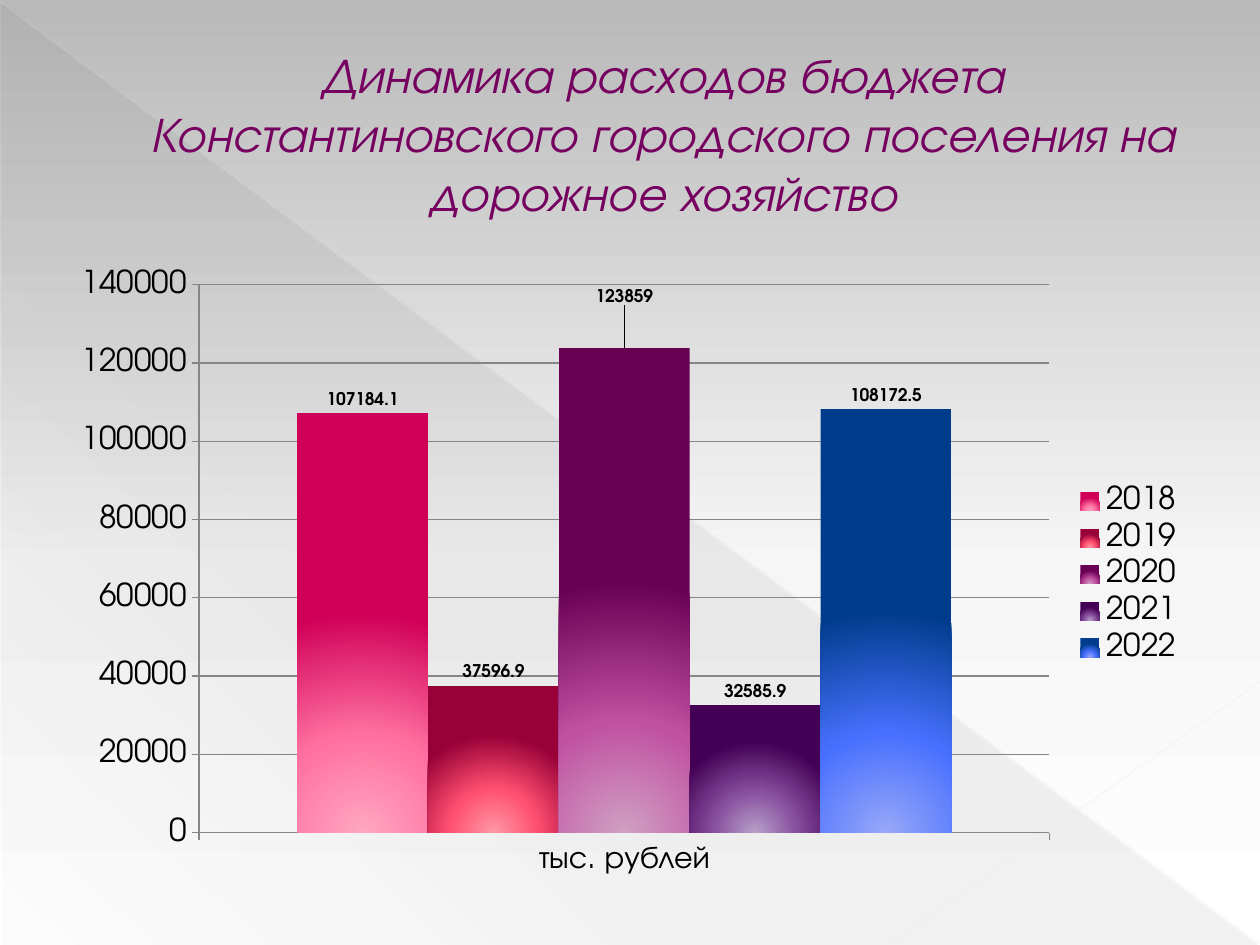
from pptx import Presentation
from pptx.chart.data import CategoryChartData
from pptx.dml.color import RGBColor
from pptx.enum.chart import XL_CHART_TYPE as ChartType, XL_LABEL_POSITION as LabelPos
from pptx.enum.chart import XL_LEGEND_POSITION as LegendPos, XL_TICK_MARK as Tick
from pptx.enum.shapes import MSO_CONNECTOR as Connector, MSO_SHAPE as Shape
from pptx.enum.text import MSO_ANCHOR as Anchor, PP_ALIGN as Align
from pptx.oxml import parse_xml
from pptx.oxml.ns import nsdecls, qn
from pptx.util import Inches, Pt

FONT = "TeX Gyre Adventor"
UNIT = "тыс. рублей"
# year, spending, gradient from the foot of the bar outwards
SPENDING = [
    ("2018", 107184.1, ("FFA6C2", "FF70A0", "D00058")),
    ("2019", 37596.9, ("FF98A4", "FF5070", "980038")),
    ("2020", 123859, ("D0A0C4", "C050A0", "680054")),
    ("2021", 32585.9, ("B8A0C8", "8850A0", "440054")),
    ("2022", 108172.5, ("98A8F8", "4870FF", "003C8C")),
]


def rgb(hex_color):
    return RGBColor.from_string(hex_color)


def set_gradient(fill, owner, stops, direction):
    """Fill owner with (percent, colour, opacity) stops; direction is XML."""
    fill.solid()
    stop_xml = "".join(
        f'<a:gs pos="{pos * 1000}"><a:srgbClr val="{color}">'
        f'<a:alpha val="{alpha * 1000}"/></a:srgbClr></a:gs>'
        for pos, color, alpha in stops)
    gradient = parse_xml(
        f'<a:gradFill {nsdecls("a")} rotWithShape="1">'
        f"<a:gsLst>{stop_xml}</a:gsLst>{direction}</a:gradFill>")
    owner.replace(owner.find(qn("a:solidFill")), gradient)


def linear(degrees):
    return f'<a:lin ang="{degrees * 60000}" scaled="0"/>'


def layout_xml(*parts):
    body = "".join(f'<c:{tag} val="{value}"/>' for tag, value in parts)
    return parse_xml(f'<c:layout {nsdecls("c")}><c:manualLayout>{body}'
                     "</c:manualLayout></c:layout>")


def add_hairline(slide, start, end, color, width, alpha):
    line = slide.shapes.add_connector(
        Connector.STRAIGHT, *(Inches(v) for v in start + end))
    line.line.color.rgb = rgb(color)
    line.line.width = Pt(width)
    properties = line._element.spPr
    properties.find(".//" + qn("a:srgbClr")).append(
        parse_xml(f'<a:alpha {nsdecls("a")} val="{alpha * 1000}"/>'))
    properties.append(parse_xml(f'<a:effectLst {nsdecls("a")}/>'))


def add_backdrop(slide):
    background = slide.background.fill
    background.solid()
    set_gradient(background, slide._element.find(".//" + qn("p:bgPr")),
                 [(0, "B9B9B9", 100), (60, "F6F6F6", 100), (100, "FFFFFF", 100)],
                 linear(90))
    wedge = slide.shapes.add_shape(
        Shape.RIGHT_TRIANGLE, Inches(0.01), Inches(0.02), Inches(9.98), Inches(7.48))
    wedge.shadow.inherit = False
    wedge.line.fill.background()
    set_gradient(wedge.fill, wedge._element.spPr,
                 [(0, "666666", 10), (70, "666666", 8), (100, "666666", 1)],
                 linear(133))
    add_hairline(slide, (0, 0.01), (9.99, 7.49), "E8E8E8", 0.39, 35)
    add_hairline(slide, (10, 5.41), (7.07, 7.49), "EAEAEA", 0.47, 45)


def add_title(slide, left, top, width, height):
    indent = Inches(0.53)
    frame = slide.shapes.add_textbox(left + indent, top, width - indent, height).text_frame
    frame.word_wrap = True
    frame.vertical_anchor = Anchor.MIDDLE
    paragraph = frame.paragraphs[0]
    paragraph.alignment = Align.CENTER
    title = paragraph.add_run()
    title.text = ("Динамика расходов бюджета Константиновского городского "
                  "поселения на дорожное хозяйство")
    title.font.name = FONT
    title.font.size = Pt(28)
    title.font.italic = True
    title.font.color.rgb = rgb("75005F")
    title._r.get_or_add_rPr().insert(0, parse_xml(
        f'<a:ln {nsdecls("a")} w="6350"><a:solidFill>'
        '<a:srgbClr val="B12761"/></a:solidFill></a:ln>'))


def style_axis(axis):
    axis.major_tick_mark = Tick.OUTSIDE
    axis.minor_tick_mark = Tick.NONE
    axis.format.line.color.rgb = rgb("868686")
    axis.format.line.width = Pt(0.75)


def style_series(series, colors):
    foot, middle, edge = colors
    series.format.fill.solid()
    set_gradient(series.format.fill, series._element.find(qn("c:spPr")),
                 [(0, foot, 100), (45, middle, 100), (100, edge, 100)],
                 '<a:path path="circle"><a:fillToRect l="50000" t="100000" '
                 'r="50000" b="0"/></a:path>')
    labels = series.data_labels
    labels.show_value = True
    labels.position = LabelPos.OUTSIDE_END
    style_label(labels.font)


def style_label(font):
    font.name = FONT
    font.size = Pt(10)
    font.bold = True
    font.color.rgb = rgb("000000")


def raise_label(series, offset):
    """Lift the only label of a series by a share of the chart height."""
    label = series.points[0].data_label
    style_label(label.font)
    label.position = LabelPos.OUTSIDE_END
    index = series._element.find(".//" + qn("c:dLbl")).find(qn("c:idx"))
    index.addnext(layout_xml(("x", 0), ("y", -offset)))


def add_spending_chart(slide, left, top, width, height):
    data = CategoryChartData(number_format="General")
    data.categories = [UNIT]
    for year, amount, _ in SPENDING:
        data.add_series(year, [amount])
    chart = slide.shapes.add_chart(
        ChartType.COLUMN_CLUSTERED, left, top, width, height, data).chart
    chart.has_title = False
    chart.font.name = FONT
    chart.font.size = Pt(18)
    chart.font.color.rgb = rgb("000000")
    chart.has_legend = True
    chart.legend.position = LegendPos.RIGHT
    chart.legend.include_in_layout = False

    amounts = chart.value_axis
    for axis in (chart.category_axis, amounts):
        style_axis(axis)
    amounts.minimum_scale, amounts.maximum_scale = 0, 140000
    amounts.major_unit = 20000
    amounts.has_major_gridlines = True
    amounts.major_gridlines.format.line.color.rgb = rgb("868686")
    amounts.major_gridlines.format.line.width = Pt(0.75)

    plot = chart.plots[0]
    plot.gap_width = 150
    plot.overlap = 0
    plot.vary_by_categories = False
    for series, (_, _, colors) in zip(plot.series, SPENDING):
        style_series(series, colors)
    raise_label(plot.series[2], 0.06)

    area = chart._chartSpace.find(".//" + qn("c:plotArea"))
    for automatic in area.findall(qn("c:layout")):
        area.remove(automatic)
    area.insert(0, layout_xml(
        ("layoutTarget", "inner"), ("xMode", "edge"), ("yMode", "edge"),
        ("x", 0.12), ("y", 0.04), ("w", 0.75), ("h", 0.87)))


def main():
    deck = Presentation()
    deck.slide_width, deck.slide_height = Inches(10), Inches(7.5)
    slide = deck.slides.add_slide(deck.slide_layouts[6])
    add_backdrop(slide)
    add_title(slide, Inches(0.5), Inches(0.29), Inches(9), Inches(1.53))
    add_spending_chart(slide, Inches(0.5), Inches(2.06), Inches(9), Inches(5))
    deck.save("out.pptx")


if __name__ == "__main__":
    main()
